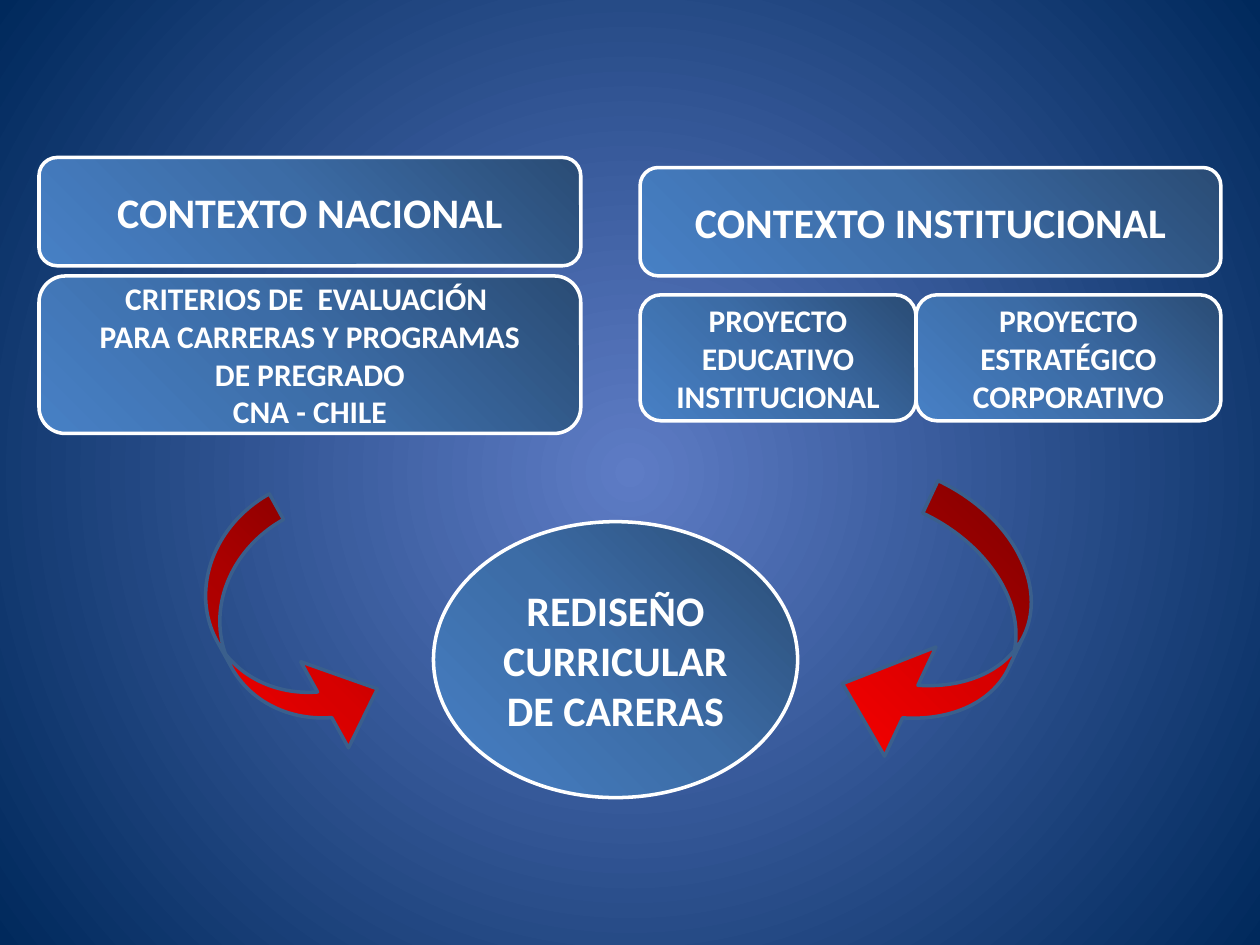
from lxml.etree import SubElement
from pptx import Presentation
from pptx.dml.color import RGBColor
from pptx.enum.shapes import MSO_SHAPE
from pptx.enum.text import MSO_ANCHOR, PP_ALIGN
from pptx.oxml.ns import qn
from pptx.util import Inches, Pt

WHITE = "FFFFFF"
ARROW_EDGE = "3A5F8C"
BACKGROUND_STOPS = [(0, "5E7CC5"), (100, "00295C")]
BLUE_STOPS = [(0, "2A4C75"), (50, "3C6CA6"), (100, "4780C5")]
RED_STOPS = [(0, "970000"), (50, "D70000"), (100, "FF0000")]
CENTER = {"l": 50, "t": 50, "r": 50, "b": 50}
TOP_RIGHT = {"l": 100, "b": 100}


def color(hex_value):
    return RGBColor.from_string(hex_value)


def radial_fill(fill, owner, stops, focus):
    """Fill with a circular gradient that spreads from the focus."""
    fill.gradient()
    gradient = owner.find(".//" + qn("a:gradFill"))
    for child in list(gradient):
        gradient.remove(child)
    stop_list = SubElement(gradient, qn("a:gsLst"))
    for position, hex_value in stops:
        stop = SubElement(stop_list, qn("a:gs"), pos=str(position * 1000))
        SubElement(stop, qn("a:srgbClr"), val=str(color(hex_value)))
    circle = SubElement(gradient, qn("a:path"), path="circle")
    sides = {side: str(percent * 1000) for side, percent in focus.items()}
    SubElement(circle, qn("a:fillToRect"), sides)


def add_gradient_shape(slide, kind, box, stops, edge):
    shape = slide.shapes.add_shape(kind, *(Inches(length) for length in box))
    shape.shadow.inherit = False
    radial_fill(shape.fill, shape.element, stops, TOP_RIGHT)
    shape.line.color.rgb = color(edge)
    shape.line.width = Pt(2)
    return shape


def add_label(slide, box, text, size, kind=MSO_SHAPE.ROUNDED_RECTANGLE):
    label = add_gradient_shape(slide, kind, box, BLUE_STOPS, WHITE)
    frame = label.text_frame
    frame.word_wrap = True
    frame.vertical_anchor = MSO_ANCHOR.MIDDLE
    frame.text = text
    for paragraph in frame.paragraphs:
        paragraph.alignment = PP_ALIGN.CENTER
        for run in paragraph.runs:
            run.font.name = "Calibri"
            run.font.size = Pt(size)
            run.font.bold = True
            run.font.color.rgb = color(WHITE)


def add_curved_arrow(slide, box, rotation, head_length, mirrored=False):
    arrow = add_gradient_shape(slide, MSO_SHAPE.CURVED_RIGHT_ARROW, box,
                               RED_STOPS, ARROW_EDGE)
    for index, value in enumerate((0.25, 0.84, head_length)):
        arrow.adjustments[index] = value
    arrow.rotation = rotation
    if mirrored:
        arrow.element.spPr.find(qn("a:xfrm")).set("flipH", "1")


def main():
    presentation = Presentation()
    presentation.slide_width = Inches(10)
    presentation.slide_height = Inches(7.5)
    slide = presentation.slides.add_slide(presentation.slide_layouts[6])
    radial_fill(slide.background.fill, slide.element, BACKGROUND_STOPS, CENTER)

    # Outcome
    add_label(slide, (3.44, 4.14, 2.89, 2.19),
              "REDISEÑO CURRICULAR\nDE CARERAS", 24, MSO_SHAPE.OVAL)

    # National context
    add_label(slide, (0.31, 1.25, 4.3, 0.86), "CONTEXTO NACIONAL", 24)
    add_label(slide, (0.31, 2.19, 4.3, 1.25),
              "CRITERIOS DE  EVALUACIÓN \nPARA CARRERAS Y PROGRAMAS\n"
              " DE PREGRADO \nCNA - CHILE", 18)
    add_curved_arrow(slide, (1.79, 4.01, 0.93, 2.16), 331, 0.46)

    # Institutional context
    add_label(slide, (5.08, 1.33, 4.61, 0.86), "CONTEXTO INSTITUCIONAL", 24)
    add_label(slide, (5.08, 2.34, 2.19, 1),
              "PROYECTO EDUCATIVO INSTITUCIONAL", 18)
    add_label(slide, (7.27, 2.34, 2.42, 1),
              "PROYECTO ESTRATÉGICO CORPORATIVO", 18)
    add_curved_arrow(slide, (6.91, 3.95, 1.14, 2.26), 25.2, 0.48, mirrored=True)

    presentation.save("out.pptx")


if __name__ == "__main__":
    main()
